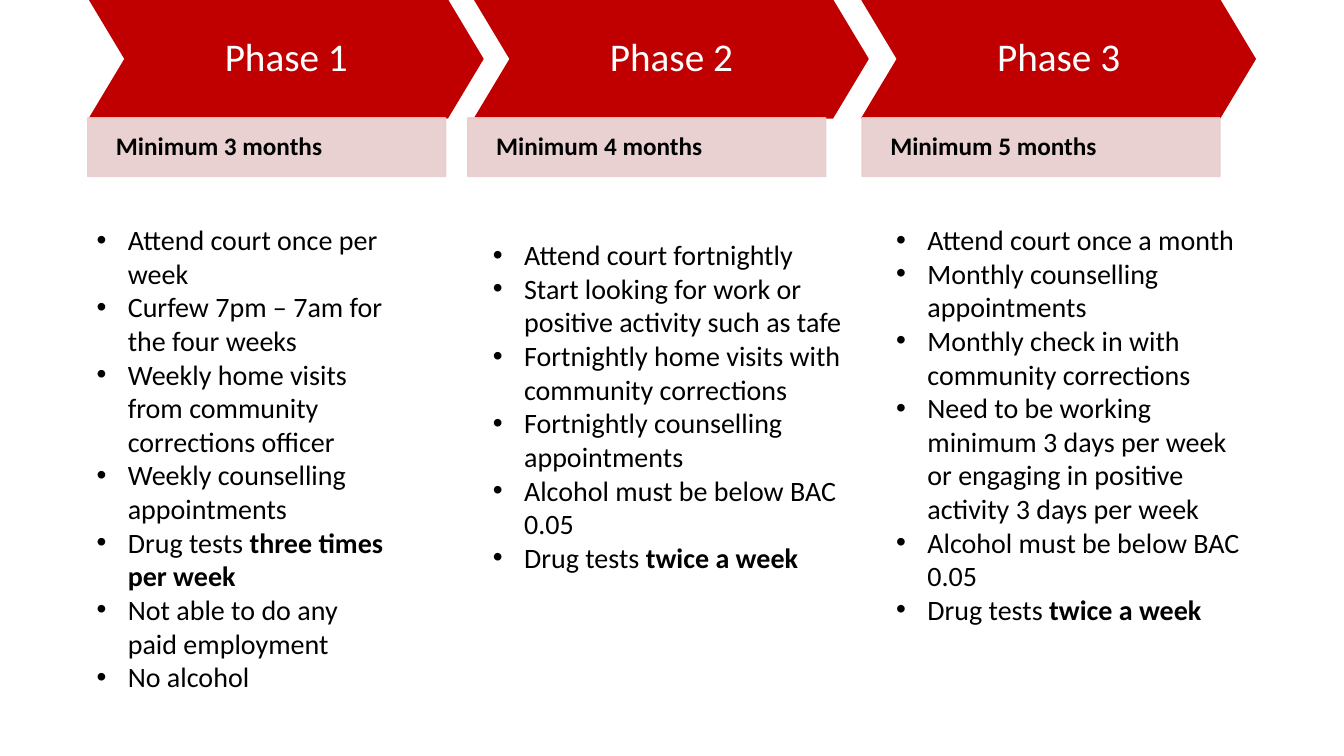
from lxml.etree import SubElement
from pptx import Presentation
from pptx.dml.color import RGBColor
from pptx.enum.shapes import MSO_SHAPE
from pptx.enum.text import MSO_ANCHOR, PP_ALIGN
from pptx.oxml.ns import qn
from pptx.util import Pt

PX = 9144
FONT = "Calibri"
COLORS = {"chevron": "C00000", "band": "E8CCCC", "text": "000000", "title": "FFFFFF"}
HINDENT = 31

PHASES = [
    {
        "title": "Phase 1", "duration": "Minimum 3 months",
        "chevron_left": 89, "band_left": 87, "rules_box": (86, 216, 310, 508),
        "rules": [
            "Attend court once per week",
            "Curfew 7pm – 7am for the four weeks",
            "Weekly home visits from community corrections officer",
            "Weekly counselling appointments",
            "Drug tests |three times per week",
            "Not able to do any paid employment",
            "No alcohol",
        ],
    },
    {
        "title": "Phase 2", "duration": "Minimum 4 months",
        "chevron_left": 471, "band_left": 464, "rules_box": (479, 231, 366, 377),
        "rules": [
            "Attend court fortnightly",
            "Start looking for work or positive activity such as tafe",
            "Fortnightly home visits with community corrections",
            "Fortnightly counselling appointments",
            "Alcohol must be below BAC 0.05",
            "Drug tests |twice a week",
        ],
    },
    {
        "title": "Phase 3", "duration": "Minimum 5 months",
        "chevron_left": 855, "band_left": 855, "rules_box": (879, 216, 366, 444),
        "rules": [
            "Attend court once a month",
            "Monthly counselling appointments",
            "Monthly check in with community corrections",
            "Need to be working minimum 3 days per week "
            "or engaging in positive activity 3 days per week",
            "Alcohol must be below BAC 0.05",
            "Drug tests |twice a week",
        ],
    },
]


def color(key):
    """Return the named colour."""
    return RGBColor.from_string(COLORS[key])


def emu(*lengths):
    """Turn px lengths into EMU."""
    return [length * PX for length in lengths]


def style(paragraph, size, color_key, bold=None):
    """Set the font that all runs of a paragraph share."""
    font = paragraph.font
    font.name, font.size, font.bold = FONT, Pt(size), bold
    font.color.rgb = color(color_key)


def add_block(slide, preset, box, color_key):
    """Add a flat shape with fill and outline in one colour."""
    block = slide.shapes.add_shape(preset, *emu(*box))
    block.shadow.inherit = False
    block.fill.solid()
    block.fill.fore_color.rgb = color(color_key)
    block.line.color.rgb = color(color_key)
    block.line.width = Pt(1)
    return block


def add_label(block, text, size, color_key, align, bold=None):
    """Write one vertically centred line in a block."""
    frame = block.text_frame
    frame.word_wrap = True
    frame.vertical_anchor = MSO_ANCHOR.MIDDLE
    frame.margin_top = frame.margin_bottom = 0
    label = frame.paragraphs[0]
    label.text = text
    label.alignment = align
    label.line_spacing = 0.9
    style(label, size, color_key, bold)


def add_chevron(slide, left, title):
    """Add the arrow that names a phase."""
    chevron = add_block(slide, MSO_SHAPE.CHEVRON, (left, 0, 390, 117), "chevron")
    chevron.adjustments[0] = 0.3
    add_label(chevron, title, 28, "title", PP_ALIGN.CENTER)


def add_band(slide, left, duration):
    """Add the translucent band that states a phase's duration."""
    band = add_block(slide, MSO_SHAPE.RECTANGLE, (left, 117, 355, 58), "band")
    for tint in band._element.spPr.iter(qn("a:srgbClr")):
        SubElement(tint, qn("a:alpha"), val="90000")
    band.text_frame.margin_left = band.text_frame.margin_right = 28 * PX
    add_label(band, duration, 18, "text", PP_ALIGN.LEFT, bold=True)


def add_bullet(paragraph):
    """Give a paragraph a round bullet and a hanging indent."""
    properties = paragraph._p.get_or_add_pPr()
    properties.set("marL", str(HINDENT * PX))
    properties.set("indent", str(-HINDENT * PX))
    SubElement(properties, qn("a:buFont"), typeface="Arial")
    SubElement(properties, qn("a:buChar"), char="•")


def add_rules(slide, box, rules):
    """Add the bulleted rules of a phase; text after a bar is bold."""
    frame = slide.shapes.add_textbox(*emu(*box)).text_frame
    frame.word_wrap = True
    for index, rule in enumerate(rules):
        paragraph = frame.add_paragraph() if index else frame.paragraphs[0]
        add_bullet(paragraph)
        style(paragraph, 20, "text")
        plain, _, stressed = rule.partition("|")
        paragraph.add_run().text = plain
        if stressed:
            emphasis = paragraph.add_run()
            emphasis.text = stressed
            emphasis.font.bold = True


def main():
    """Build the slide of the three phases."""
    presentation = Presentation()
    presentation.slide_width, presentation.slide_height = emu(1333, 750)
    slide = presentation.slides.add_slide(presentation.slide_layouts[6])
    for phase in PHASES:
        add_rules(slide, phase["rules_box"], phase["rules"])
        add_chevron(slide, phase["chevron_left"], phase["title"])
        add_band(slide, phase["band_left"], phase["duration"])
    presentation.save("out.pptx")


if __name__ == "__main__":
    main()
